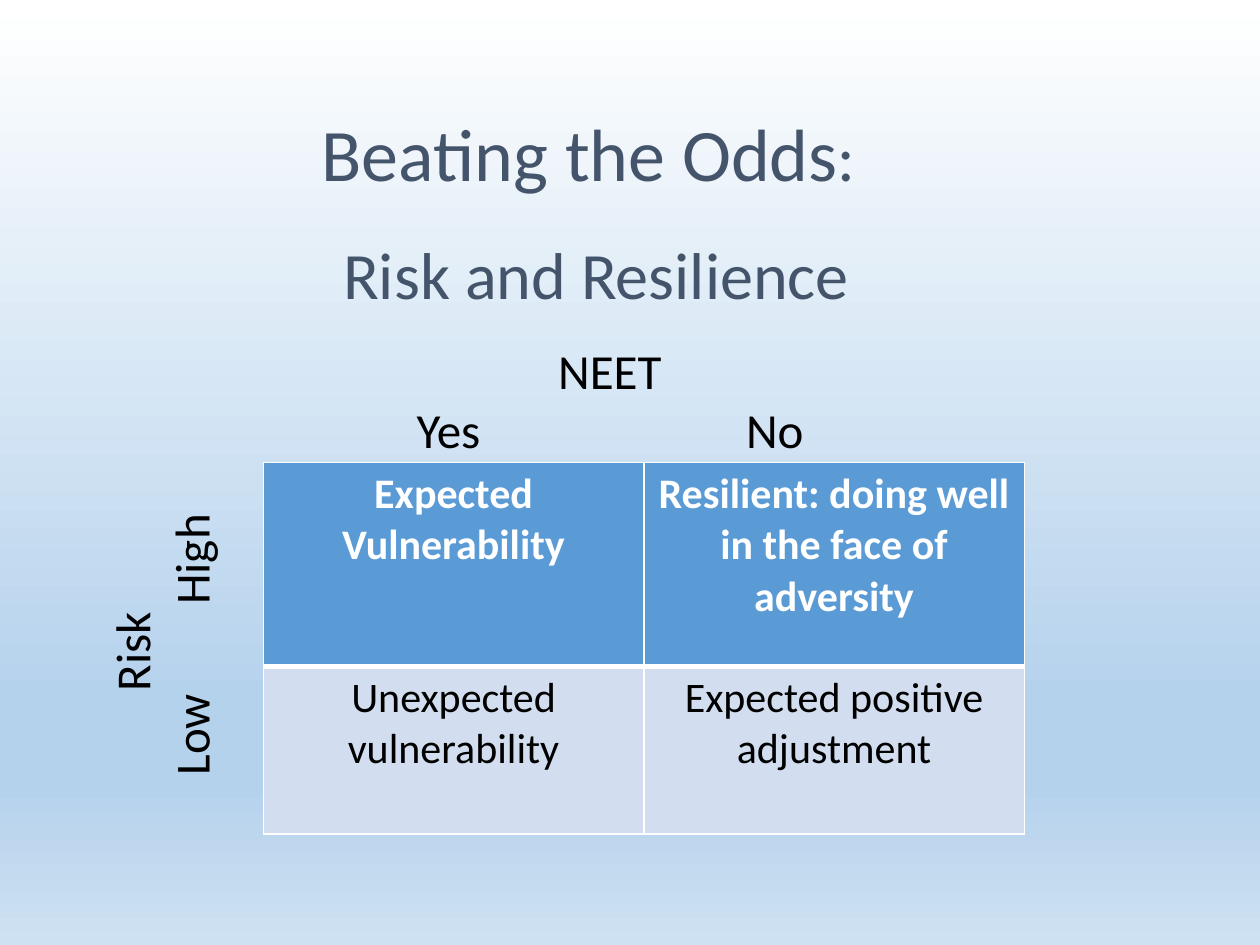
from pptx import Presentation
from pptx.dml.color import RGBColor
from pptx.enum.text import MSO_ANCHOR, PP_ALIGN
from pptx.oxml import parse_xml
from pptx.oxml.ns import nsdecls
from pptx.util import Inches, Pt

CENTER = PP_ALIGN.CENTER
BOTTOM = MSO_ANCHOR.BOTTOM
FONT = "Calibri"
SLATE = RGBColor(0x44, 0x54, 0x6A)
BLACK = RGBColor(0x00, 0x00, 0x00)
WHITE = RGBColor(0xFF, 0xFF, 0xFF)
BLUE = RGBColor(0x5B, 0x9B, 0xD5)
PALE_BLUE = RGBColor(0xD2, 0xDE, 0xEF)
SKY = RGBColor(0xB5, 0xD2, 0xEC)
MIST = RGBColor(0xCE, 0xE1, 0xF2)
BACKGROUND_STOPS = [(0, WHITE), (74, SKY), (83, SKY), (100, MIST)]

LABEL_WIDTH, LABEL_HEIGHT = 1.5, 0.57
# text, centre x, centre y, rotation
LABELS = [
    ("NEET", 4.84, 2.94, 0),
    ("Yes", 3.56, 3.41, 0),
    ("No", 6.15, 3.41, 0),
    ("Risk", 1.04, 5.17, 270),
    ("High", 1.51, 4.44, 270),
    ("Low", 1.51, 5.83, 270),
]
# row height, fill, text colour, bold, bottom border in points, cell texts
TABLE_ROWS = [
    (1.62, BLUE, WHITE, True, 3,
     ["Expected Vulnerability", "Resilient: doing well in the face of adversity"]),
    (1.33, PALE_BLUE, BLACK, False, 1,
     ["Unexpected vulnerability", "Expected positive adjustment"]),
]


def set_background(page):
    """Fill the page with a gradient that runs from top to bottom."""
    stops = "".join(
        f'<a:gs pos="{percent * 1000}"><a:srgbClr val="{color}"/></a:gs>'
        for percent, color in BACKGROUND_STOPS
    )
    page._element.cSld.insert(0, parse_xml(
        f'<p:bg {nsdecls("p", "a")}><p:bgPr><a:gradFill><a:gsLst>{stops}</a:gsLst>'
        '<a:lin ang="5400000" scaled="0"/></a:gradFill><a:effectLst/></p:bgPr></p:bg>'
    ))


def write_text(para, text, size, color=BLACK, bold=False):
    para.alignment = CENTER
    span = para.add_run()
    span.text = text
    font = span.font
    font.name, font.size, font.bold = FONT, Pt(size), bold
    font.color.rgb = color


def add_title(page):
    box = page.shapes.add_textbox(Inches(1.54), Inches(1.23), Inches(6.38), Inches(1.25))
    frame = box.text_frame
    frame.word_wrap = True
    frame.vertical_anchor = BOTTOM
    frame.margin_left = frame.margin_top = frame.margin_right = frame.margin_bottom = 0
    heading, subheading = frame.paragraphs[0], frame.add_paragraph()
    write_text(heading, "Beating the Odds", 42.3, color=SLATE)
    write_text(heading, ": ", 37.8, color=SLATE)
    write_text(subheading, "Risk and Resilience", 37.8, color=SLATE)
    heading.line_spacing = subheading.line_spacing = Pt(33.3)
    subheading.space_before = Pt(33.3)


def add_label(page, text, center_x, center_y, rotation):
    box = page.shapes.add_textbox(
        Inches(center_x - LABEL_WIDTH / 2), Inches(center_y - LABEL_HEIGHT / 2),
        Inches(LABEL_WIDTH), Inches(LABEL_HEIGHT),
    )
    box.rotation = rotation
    box.text_frame.word_wrap = True
    write_text(box.text_frame.paragraphs[0], text, 28)


def set_borders(cell, widths):
    """Draw white borders; widths maps each side (L, R, T, B) to points."""
    properties = cell._tc.get_or_add_tcPr()
    for position, (side, width) in enumerate(widths.items()):
        properties.insert(position, parse_xml(
            f'<a:ln{side} {nsdecls("a")} w="{Pt(width)}"><a:solidFill>'
            f'<a:srgbClr val="{WHITE}"/></a:solidFill></a:ln{side}>'
        ))


def add_risk_table(page):
    height = sum(row[0] for row in TABLE_ROWS)
    table = page.shapes.add_table(
        2, 2, Inches(2.09), Inches(3.67), Inches(6.04), Inches(height)
    ).table
    top = 1
    for row, (row_height, fill, color, bold, bottom, texts) in zip(table.rows, TABLE_ROWS):
        row.height = Inches(row_height)
        for cell, text in zip(row.cells, texts):
            cell.fill.solid()
            cell.fill.fore_color.rgb = fill
            set_borders(cell, {"L": 1, "R": 1, "T": top, "B": bottom})
            write_text(cell.text_frame.paragraphs[0], text, 24, color=color, bold=bold)
        top = bottom


def main():
    deck = Presentation()
    deck.slide_width, deck.slide_height = Inches(10), Inches(7.5)
    page = deck.slides.add_slide(deck.slide_layouts[6])
    set_background(page)
    add_title(page)
    add_risk_table(page)
    for label in LABELS:
        add_label(page, *label)
    deck.save("out.pptx")


if __name__ == "__main__":
    main()
